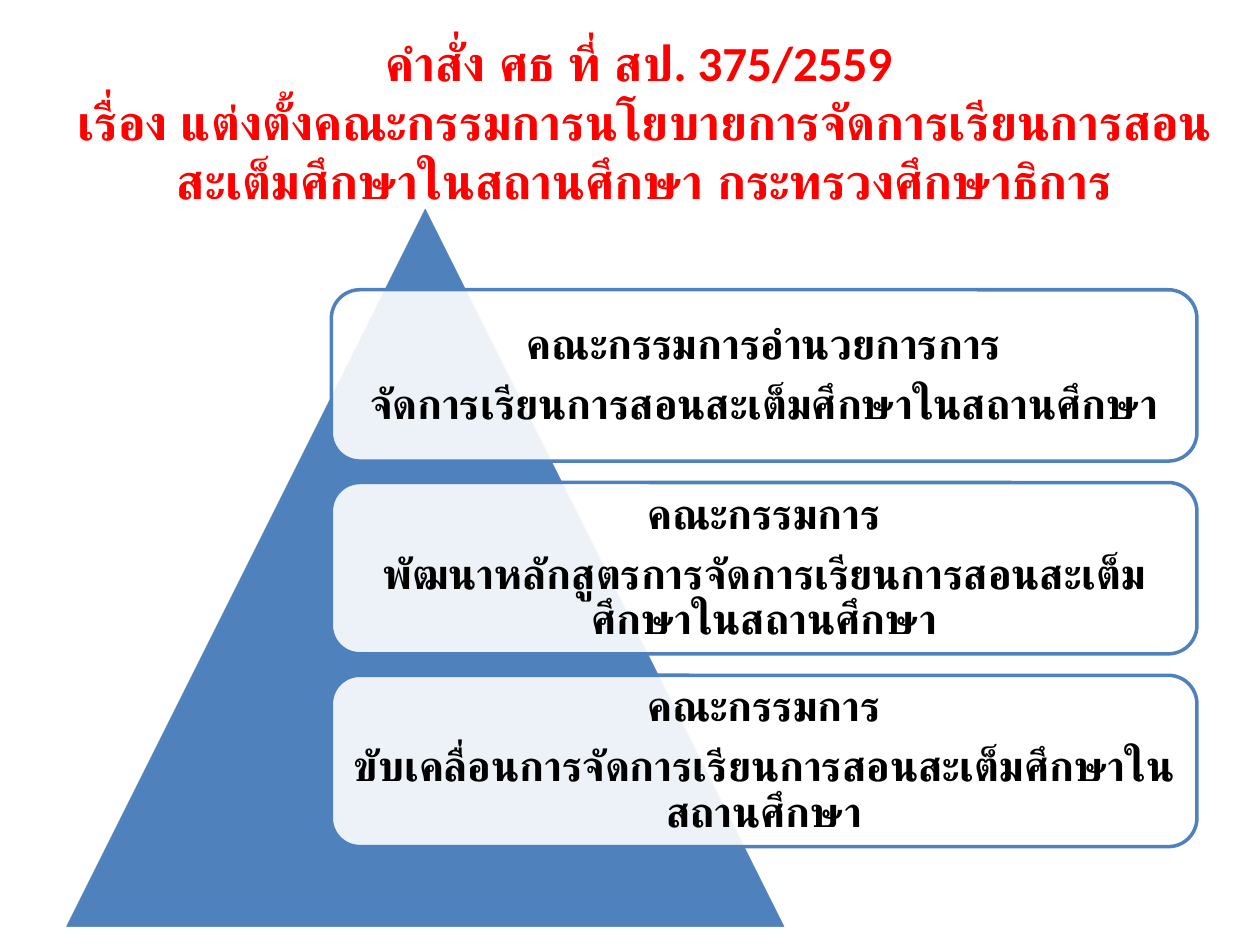
from lxml.etree import SubElement
from pptx import Presentation
from pptx.dml.color import RGBColor
from pptx.enum.shapes import MSO_SHAPE
from pptx.enum.text import MSO_ANCHOR, MSO_AUTO_SIZE, PP_ALIGN
from pptx.oxml.ns import qn
from pptx.util import Inches, Pt

HEADING = [
    "คำสั่ง ศธ ที่ สป. 375/2559 ",
    "เรื่อง แต่งตั้งคณะกรรมการนโยบายการจัดการเรียนการสอน",
    "สะเต็มศึกษาในสถานศึกษา กระทรวงศึกษาธิการ",
]
COMMITTEES = [
    ["คณะกรรมการอำนวยการการ", "จัดการเรียนการสอนสะเต็มศึกษาในสถานศึกษา"],
    ["คณะกรรมการ", "พัฒนาหลักสูตรการจัดการเรียนการสอนสะเต็มศึกษาในสถานศึกษา"],
    ["คณะกรรมการ", "ขับเคลื่อนการจัดการเรียนการสอนสะเต็มศึกษาในสถานศึกษา"],
]
FIRST_TOP, PITCH = 2.3, 1.53


def color(hex_code):
    return RGBColor.from_string(hex_code)


class PyramidSlide:
    FONT = "Calibri"
    BLUE, WHITE, BLACK, RED = "4F81BD", "FFFFFF", "000000", "FF0000"

    def __init__(self, slide):
        self.slide = slide

    def add_lines(self, frame, lines, size, ink, spacing=None, after=0):
        """Fill a text frame with one centred bold paragraph per line."""
        frame.word_wrap = True
        for index, line in enumerate(lines):
            paragraph = frame.paragraphs[0] if index == 0 else frame.add_paragraph()
            paragraph.alignment = PP_ALIGN.CENTER
            paragraph.line_spacing = spacing
            paragraph.space_after = Pt(after)
            run = paragraph.add_run()
            run.text = line
            run.font.name = self.FONT
            run.font.size = Pt(size)
            run.font.bold = True
            run.font.color.rgb = color(ink)

    def title(self, lines, left, top, width, height):
        heading = self.slide.shapes.title
        heading.left, heading.top = Inches(left), Inches(top)
        heading.width, heading.height = Inches(width), Inches(height)
        frame = heading.text_frame
        frame.vertical_anchor = MSO_ANCHOR.TOP
        frame.auto_size = MSO_AUTO_SIZE.SHAPE_TO_FIT_TEXT
        self.add_lines(frame, lines, 28, self.RED)

    def shape(self, kind, left, top, width, height, fill, line):
        shape = self.slide.shapes.add_shape(
            kind, Inches(left), Inches(top), Inches(width), Inches(height))
        shape.shadow.inherit = False
        shape.fill.solid()
        shape.fill.fore_color.rgb = color(fill)
        shape.line.color.rgb = color(line)
        shape.line.width = Pt(2)
        return shape

    def pyramid(self, left, top, side):
        self.shape(MSO_SHAPE.ISOSCELES_TRIANGLE, left, top, side, side,
                   self.BLUE, self.WHITE)

    def committee(self, lines, left, top, width, height):
        """Add a card that lets the pyramid show faintly through."""
        card = self.shape(MSO_SHAPE.ROUNDED_RECTANGLE, left, top, width, height,
                          self.WHITE, self.BLUE)
        fill_color = card.element.spPr.find(qn("a:solidFill"))[0]
        SubElement(fill_color, qn("a:alpha"), val="90000")
        frame = card.text_frame
        frame.vertical_anchor = MSO_ANCHOR.MIDDLE
        frame.margin_left = frame.margin_right = Inches(0.1)
        frame.margin_top = frame.margin_bottom = Inches(0.1)
        self.add_lines(frame, lines, 24, self.BLACK, spacing=0.9, after=8.4)


def main():
    deck = Presentation()
    deck.slide_width, deck.slide_height = Inches(10), Inches(7.5)
    page = PyramidSlide(deck.slides.add_slide(deck.slide_layouts[5]))
    page.title(HEADING, 0.51, 0.21, 9.21, 1.92)
    page.pyramid(0.5, 1.62, 5.75)
    for row, lines in enumerate(COMMITTEES):
        page.committee(lines, 2.63, FIRST_TOP + row * PITCH, 6.87, 1.36)
    deck.save("out.pptx")


if __name__ == "__main__":
    main()
